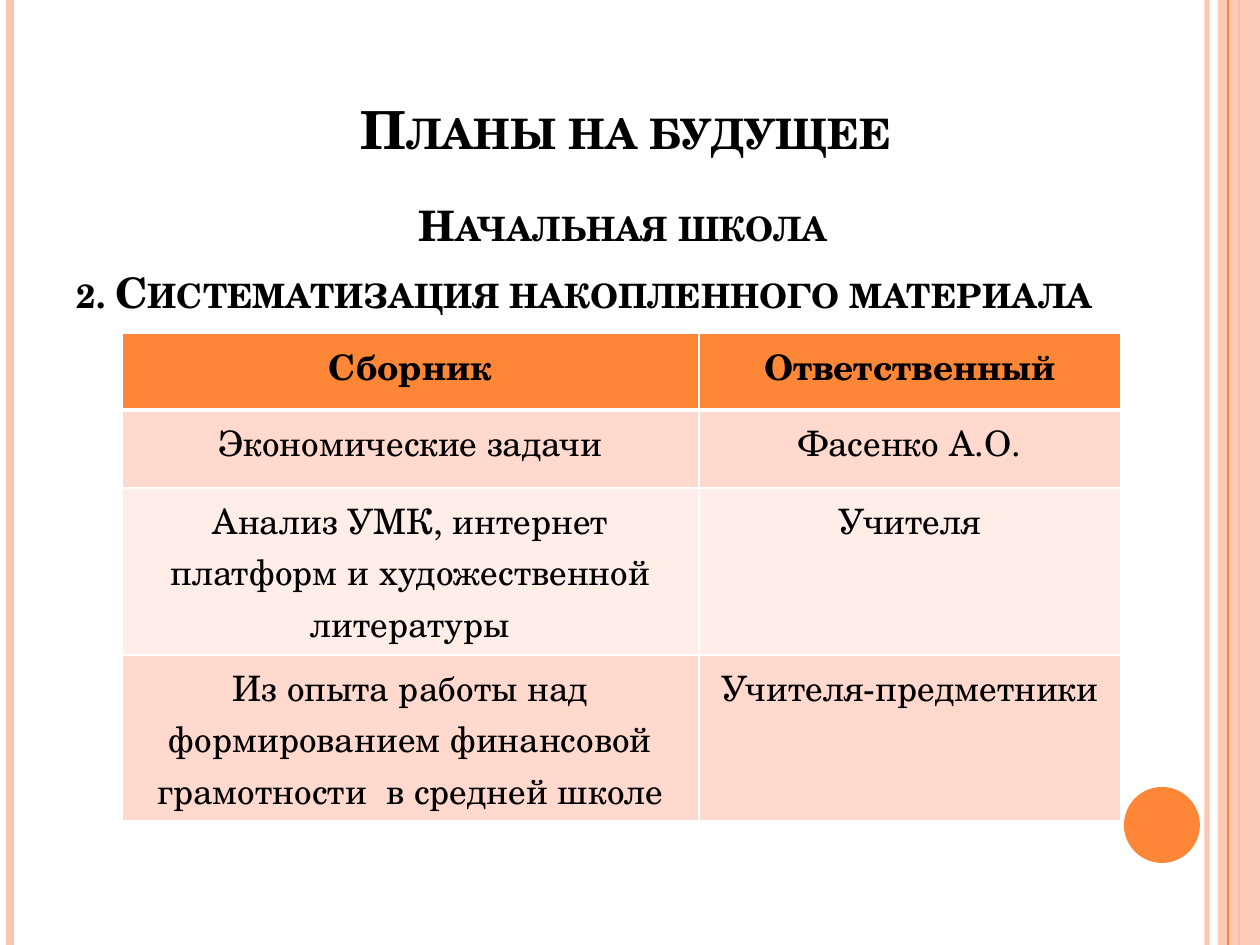
from lxml import etree
from pptx import Presentation
from pptx.dml.color import RGBColor
from pptx.enum.shapes import MSO_CONNECTOR, MSO_SHAPE
from pptx.enum.text import MSO_ANCHOR, PP_ALIGN
from pptx.oxml.ns import qn
from pptx.util import Pt

SCALE = 914400 / 126
WIDTH, HEIGHT = 1260, 945
FONT = "TeX Gyre Schola"
STRAIGHT = MSO_CONNECTOR.STRAIGHT
RECT, OVAL = MSO_SHAPE.RECTANGLE, MSO_SHAPE.OVAL
CENTER, BOTTOM = PP_ALIGN.CENTER, MSO_ANCHOR.BOTTOM
COLORS = {
    "orange": "FE8637",
    "peach": "FEC3AE",
    "band": "FFD9CE",
    "pale": "FFEDE8",
    "text": "000000",
    "white": "FFFFFF",
}
COLS = [577, 422]
ROWS = [
    (77, "orange", ["Сборник", "Ответственный"]),
    (78, "band", ["Экономические задачи", "Фасенко А.О."]),
    (167, "pale", ["Анализ УМК, интернет платформ и художественной литературы",
                   "Учителя"]),
    (166, "band", ["Из опыта работы над формированием финансовой "
                   "грамотности  в средней школе", "Учителя-предметники"]),
]


def px(*nums):
    """Turn pixel lengths into a list of EMU."""
    return [round(num * SCALE) for num in nums]


def paint(fill, name, alpha=100):
    """Give a fill a solid colour and an opacity in percent."""
    fill.solid()
    fill.fore_color.rgb = RGBColor.from_string(COLORS[name])
    if alpha < 100:
        color = next(fill._xPr.iter(qn("a:srgbClr")))
        etree.SubElement(color, qn("a:alpha"), val=str(alpha * 1000))


def add_stripe(slide, x, name, weight, alpha=100):
    """Draw a line down the full height of the slide."""
    line = slide.shapes.add_connector(STRAIGHT, *px(x, 0, x, HEIGHT))
    line.line.width = Pt(weight)
    paint(line.line.fill, name, alpha)
    etree.SubElement(line._element.spPr, qn("a:effectLst"))


def add_block(slide, kind, box, name, alpha=100):
    """Draw a filled shape without an outline."""
    shape = slide.shapes.add_shape(kind, *px(*box))
    shape.shadow.inherit = False
    shape.line.fill.background()
    paint(shape.fill, name, alpha)


def set_text(frame, text, size, bold, small=False):
    """Write one centred paragraph and format its run."""
    frame.text = text
    para = frame.paragraphs[0]
    para.alignment = CENTER
    font = para.runs[0].font
    font.name, font.size, font.bold = FONT, Pt(size), bold
    font.color.rgb = RGBColor.from_string(COLORS["text"])
    if small:
        font._element.set("cap", "small")


def add_head(slide, box, text, size):
    """Add a bold heading in small capitals."""
    frame = slide.shapes.add_textbox(*px(*box)).text_frame
    frame.word_wrap = True
    frame.vertical_anchor = BOTTOM
    set_text(frame, text, size, True, True)


def add_edges(cell, **widths):
    """Draw white cell borders with widths in points."""
    props = cell._tc.get_or_add_tcPr()
    for side, width in widths.items():
        edge = etree.SubElement(props, qn(f"a:ln{side}"), w=str(Pt(width)))
        fill = etree.SubElement(edge, qn("a:solidFill"))
        etree.SubElement(fill, qn("a:srgbClr"), val=COLORS["white"])


def add_grid(slide, left, top):
    """Add the table of collections and those in charge."""
    high = sum(row[0] for row in ROWS)
    size = px(left, top, sum(COLS), high)
    table = slide.shapes.add_table(len(ROWS), len(COLS), *size).table
    for col, width in zip(table.columns, px(*COLS)):
        col.width = width
    for i, (height, name, texts) in enumerate(ROWS):
        table.rows[i].height = px(height)[0]
        for j, text in enumerate(texts):
            cell = table.cell(i, j)
            set_text(cell.text_frame, text, 20, i == 0)
            add_edges(cell, L=1, R=1, T=3 if i == 1 else 1,
                      B=3 if i == 0 else 1)
            paint(cell.fill, name)


def main():
    """Build the slide and save it."""
    deck = Presentation()
    deck.slide_width, deck.slide_height = px(WIDTH, HEIGHT)
    slide = deck.slides.add_slide(deck.slide_layouts[6])
    add_stripe(slide, 1207, "peach", 3, 93)
    add_stripe(slide, 10, "peach", 4.5)
    add_stripe(slide, 1239, "orange", 1.5)
    add_block(slide, RECT, (1218, 0, 42, HEIGHT), "peach", 87)
    add_stripe(slide, 1228, "orange", 0.75)
    add_block(slide, OVAL, (1124, 787, 76, 76), "orange")
    add_head(slide, (125, 86, 1002, 80), "Планы на будущее", 30)
    add_head(slide, (122, 175, 1002, 81), "Начальная школа", 24)
    add_head(slide, (39, 243, 1091, 80),
             "2. Систематизация накопленного материала", 24)
    add_grid(slide, 122, 333)
    deck.save("out.pptx")


if __name__ == "__main__":
    main()
